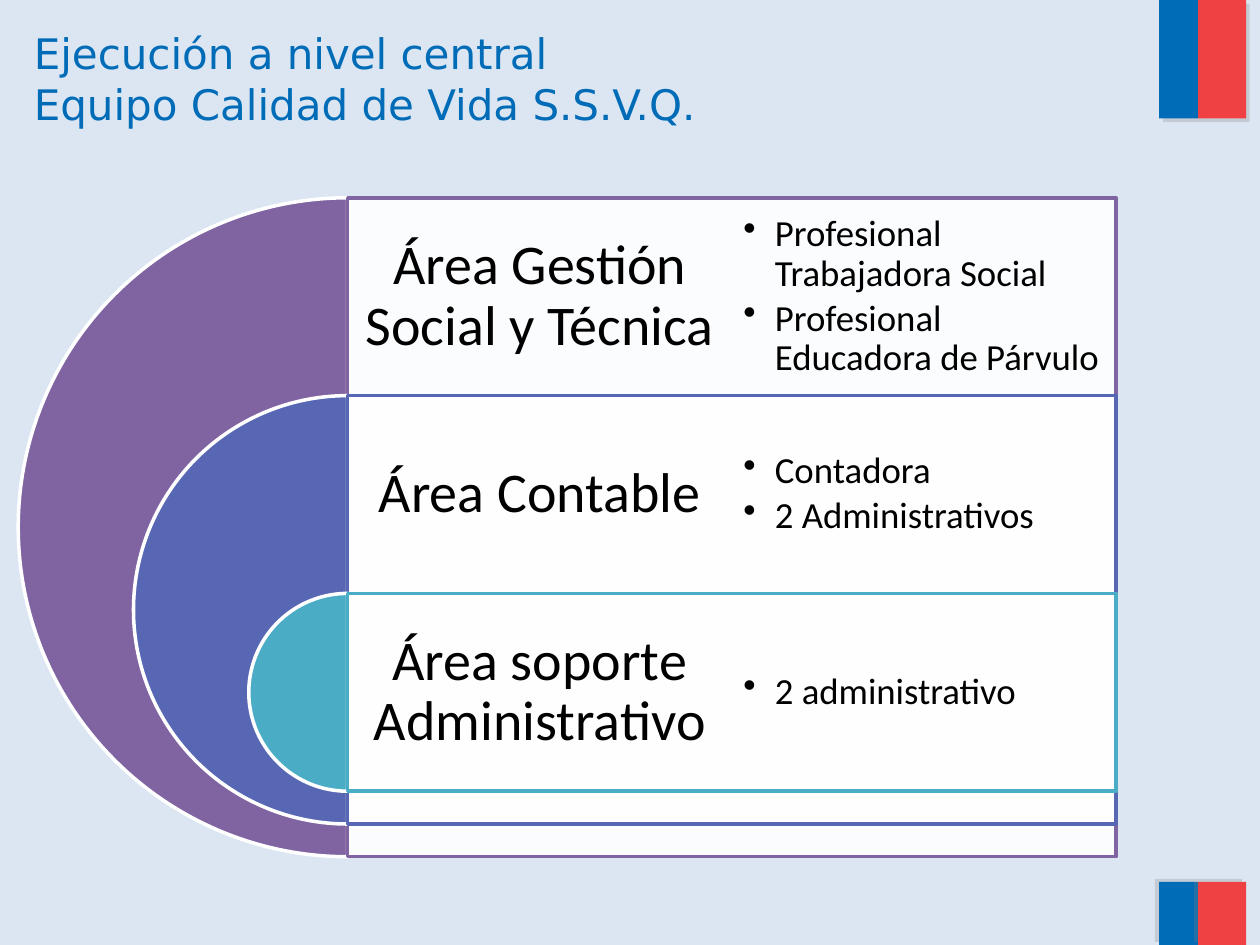
import pptx
import pptx.dml.color
import pptx.enum.shapes
import pptx.enum.text
import pptx.oxml
import pptx.oxml.ns
import pptx.util

Inches = pptx.util.Inches
Pt = pptx.util.Pt
SHAPE = pptx.enum.shapes.MSO_SHAPE
ALIGN = pptx.enum.text.PP_ALIGN
ANCHOR = pptx.enum.text.MSO_ANCHOR
NAMESPACE = pptx.oxml.ns.nsdecls("a")


def color(target, code):
    """Give a fill, or the fill of a line or font, a solid colour."""
    target.solid()
    target.fore_color.rgb = pptx.dml.color.RGBColor.from_string(code)


def write(text, left, top, width, height, size, font="Calibri", code="000000",
          align=ALIGN.LEFT, anchor=ANCHOR.MIDDLE, inset=(0.1, 0.05),
          leading=0.9, after=0, bullet=False):
    """Add a text box with one paragraph for each line of text."""
    box = page.shapes.add_textbox(Inches(left), Inches(top), Inches(width), Inches(height))
    frame = box.text_frame
    frame.word_wrap = True
    frame.vertical_anchor = anchor
    frame.margin_left = frame.margin_right = Inches(inset[0])
    frame.margin_top = frame.margin_bottom = Inches(inset[1])
    frame.text = text
    for para in frame.paragraphs:
        para.alignment = align
        para.line_spacing = leading
        para.space_after = Pt(after)
        for span in para.runs:
            span.font.size = Pt(size)
            span.font.name = font
            color(span.font.fill, code)
        if bullet:
            properties = para._p.get_or_add_pPr()
            properties.set("marL", str(Inches(0.25)))
            properties.set("indent", str(-Inches(0.25)))
            properties.append(pptx.oxml.parse_xml(f'<a:buChar {NAMESPACE} char="•"/>'))


deck = pptx.Presentation()
deck.slide_width = Inches(10)
deck.slide_height = Inches(7.5)
page = deck.slides.add_slide(deck.slide_layouts[6])
color(page.background.fill, "DCE6F2")

# Two-colour bands at the top and bottom right, with the shadow direction of each
for top, height, angle in [(0, 0.94, 45), (7, 0.5, 215)]:
    for left, width, code in [(9.2, 0.31, "006CB7"), (9.51, 0.38, "EF4144")]:
        band = page.shapes.add_shape(SHAPE.RECTANGLE, Inches(left), Inches(top),
                                     Inches(width), Inches(height))
        color(band.fill, code)
        band.line.fill.background()
        band._element.spPr.append(pptx.oxml.parse_xml(
            f'<a:effectLst {NAMESPACE}><a:outerShdw blurRad="0" dist="{Pt(3)}" '
            f'dir="{angle * 60000}" algn="ctr" rotWithShape="0"><a:srgbClr val="808080">'
            '<a:alpha val="25000"/></a:srgbClr></a:outerShdw></a:effectLst>'))

# Title
write("Ejecución a nivel central\nEquipo Calidad de Vida S.S.V.Q.", 0.17, 0.17, 8.93, 1.25,
      24, font="DejaVu Sans", code="006CB7", anchor=ANCHOR.TOP, leading=1)

# Nested half discs and panels: each level starts one row lower and is smaller by a step
axis, first_row, row, column, step = 2.76, 1.57, 1.57, 3.05, 1.83
areas = [
    ("8064A2", "Área Gestión Social y Técnica",
     "Profesional Trabajadora Social\nProfesional Educadora de Párvulo"),
    ("5767B4", "Área Contable", "Contadora\n2 Administrativos"),
    ("4BACC6", "Área soporte Administrativo", "2 administrativo"),
]
for level, (code, area, staff) in enumerate(areas):
    top = first_row + level * row
    size = row + (len(areas) - 1 - level) * step

    disc = page.shapes.add_shape(SHAPE.PIE, Inches(axis - size / 2), Inches(top),
                                 Inches(size), Inches(size))
    disc.adjustments[0] = 54   # 90 degrees
    disc.adjustments[1] = 162  # 270 degrees
    panel = page.shapes.add_shape(SHAPE.RECTANGLE, Inches(axis), Inches(top),
                                  Inches(2 * column), Inches(size))
    for shape, fill, line in [(disc, code, "FFFFFF"), (panel, "FFFFFF", code)]:
        shape.shadow.inherit = False
        color(shape.fill, fill)
        color(shape.line.fill, line)
        shape.line.width = Pt(2)
    panel_color = panel._element.spPr.find(pptx.oxml.ns.qn("a:solidFill"))[0]
    panel_color.append(pptx.oxml.parse_xml(f'<a:alpha {NAMESPACE} val="90000"/>'))

    write(area, axis, top, column, row, 32, align=ALIGN.CENTER, inset=(0.13, 0.13))
    write(staff, axis + column, top, column, row, 21, inset=(0.09, 0.09),
          after=3, bullet=True)

deck.save("out.pptx")
